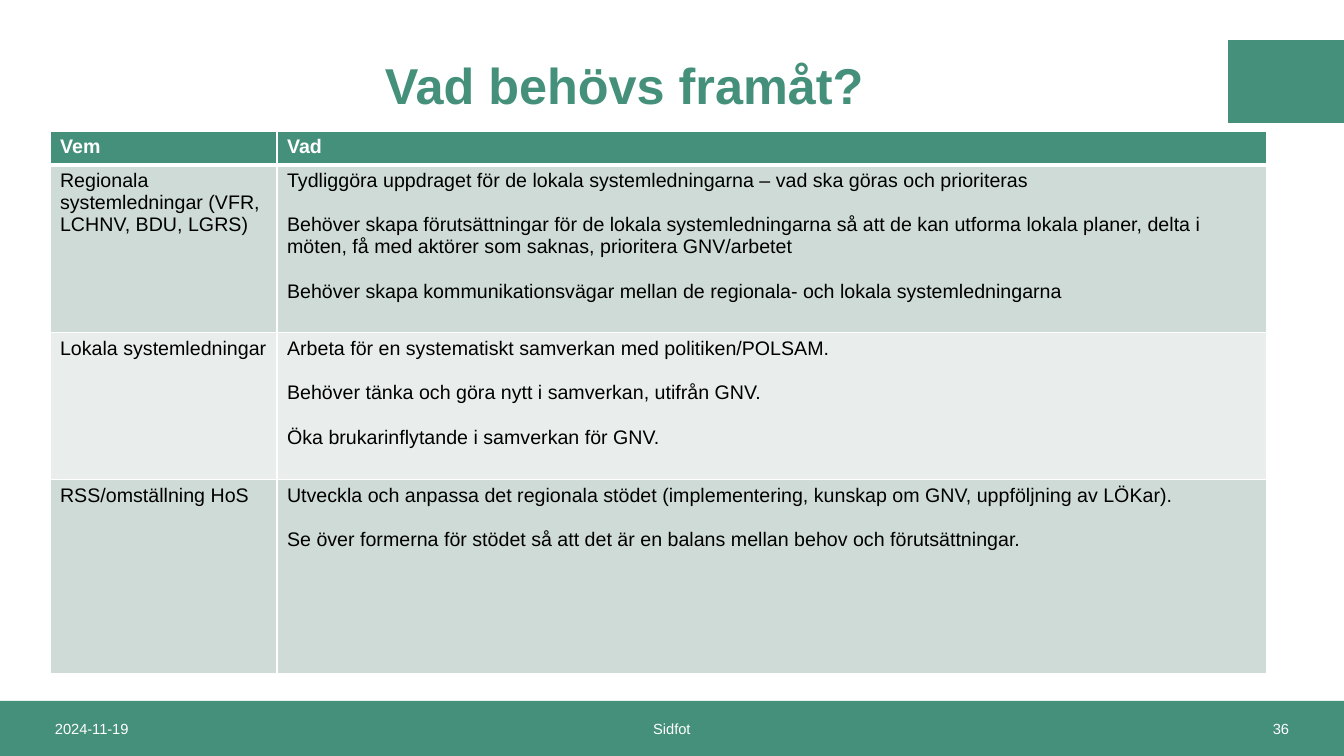
from lxml import etree
from pptx import Presentation
from pptx import util as u
from pptx.dml.color import RGBColor
from pptx.enum import shapes, text
from pptx.oxml import ns

PX = 914400 / 100.8
GREEN = RGBColor(0x45, 0x90, 0x7A)
WHITE = RGBColor(0xFF, 0xFF, 0xFF)
BLACK = RGBColor(0x00, 0x00, 0x00)
DARK = RGBColor(0xCF, 0xDB, 0xD7)
LIGHT = RGBColor(0xE9, 0xEE, 0xEC)

LEFT, MID, RIGHT = text.PP_ALIGN.LEFT, text.PP_ALIGN.CENTER, text.PP_ALIGN.RIGHT
FOOT = {"size": u.Pt(10.5), "bold": False}
TITLE = {"size": u.Pt(36), "bold": True}
HEAD = {"size": u.Pt(14), "bold": True}
BODY = {"size": u.Pt(14), "bold": False}

COLS = [227, 990]
ROWS = [32, 168, 147, 194]
CELLS = [
    ("Vem", ["Vad"]),
    ("Regionala systemledningar (VFR, LCHNV, BDU, LGRS)", [
        "Tydliggöra uppdraget för de lokala systemledningarna – vad ska göras och prioriteras",
        "Behöver skapa förutsättningar för de lokala systemledningarna så att de kan utforma "
        "lokala planer, delta i möten, få med aktörer som saknas, prioritera GNV/arbetet",
        "Behöver skapa kommunikationsvägar mellan de regionala- och lokala systemledningarna",
    ]),
    ("Lokala systemledningar", [
        "Arbeta för en systematiskt samverkan med politiken/POLSAM.",
        "Behöver tänka och göra nytt i samverkan, utifrån GNV.",
        "Öka brukarinflytande i samverkan för GNV.",
    ]),
    ("RSS/omställning HoS", [
        "Utveckla och anpassa det regionala stödet (implementering, kunskap om GNV, "
        "uppföljning av LÖKar).",
        "Se över formerna för stödet så att det är en balans mellan behov och förutsättningar.",
    ]),
]


def px(*nums):
    return [u.Emu(round(n * PX)) for n in nums]


def write(frame, lines, font, color, align=LEFT, gap=16):
    frame.word_wrap = True
    for i, line in enumerate(lines):
        para = frame.paragraphs[0] if i == 0 else frame.add_paragraph()
        para.alignment = align
        if i:
            para.space_before = u.Pt(gap)
        run = para.add_run()
        run.text = line
        for key, val in {"name": "Arial", **font}.items():
            setattr(run.font, key, val)
        run.font.color.rgb = color


def add_bar(slide, *box):
    bar = slide.shapes.add_shape(shapes.MSO_SHAPE.RECTANGLE, *px(*box))
    bar.shadow.inherit = False
    bar.fill.solid()
    bar.fill.fore_color.rgb = GREEN
    bar.line.fill.background()


def add_label(slide, line, box, font, color, align=LEFT):
    frame = slide.shapes.add_textbox(*px(*box)).text_frame
    frame.vertical_anchor = text.MSO_ANCHOR.MIDDLE
    write(frame, [line], font, color, align)
    return frame


def edge(cell, widths):
    props = cell._tc.get_or_add_tcPr()
    for i, (side, width) in enumerate(widths.items()):
        line = etree.Element(ns.qn("a:ln" + side), w=str(u.Pt(width)))
        fill = etree.SubElement(line, ns.qn("a:solidFill"))
        etree.SubElement(fill, ns.qn("a:srgbClr"), val=str(WHITE))
        props.insert(i, line)


def add_grid(slide, left, top):
    box = px(left, top, sum(COLS), sum(ROWS))
    grid = slide.shapes.add_table(len(ROWS), len(COLS), *box).table
    for col, width in zip(grid.columns, px(*COLS)):
        col.width = width
    for r, (who, what) in enumerate(CELLS):
        grid.rows[r].height = px(ROWS[r])[0]
        shade = GREEN if r == 0 else DARK if r % 2 else LIGHT
        font, color = (BODY, BLACK) if r else (HEAD, WHITE)
        # The rule below the header is thicker than the rest
        widths = {"L": 1, "R": 1, "T": 3 if r == 1 else 1, "B": 1 if r else 3}
        for c, lines in enumerate([[who], what]):
            cell = grid.cell(r, c)
            cell.fill.solid()
            cell.fill.fore_color.rgb = shade
            write(cell.text_frame, lines, font, color)
            edge(cell, widths)


def main():
    deck = Presentation()
    deck.slide_width, deck.slide_height = px(1344, 756)
    slide = deck.slides.add_slide(deck.slide_layouts[6])

    # Corner block and footer band
    add_bar(slide, 1228, 40, 116, 83)
    add_bar(slide, 0, 701, 1344, 55)

    # Footer texts
    add_label(slide, "2024-11-19", (45, 701, 350, 55), FOOT, WHITE)
    add_label(slide, "Sidfot", (445, 701, 454, 55), FOOT, WHITE, MID)
    add_label(slide, "36", (949, 701, 350, 55), FOOT, WHITE, RIGHT)

    # Title
    title = add_label(slide, "Vad behövs framåt?", (375, 22, 524, 133), TITLE, GREEN)
    title.paragraphs[0].line_spacing = 0.9

    # Table of who and what
    add_grid(slide, 50, 131)
    deck.save("out.pptx")


if __name__ == "__main__":
    main()
